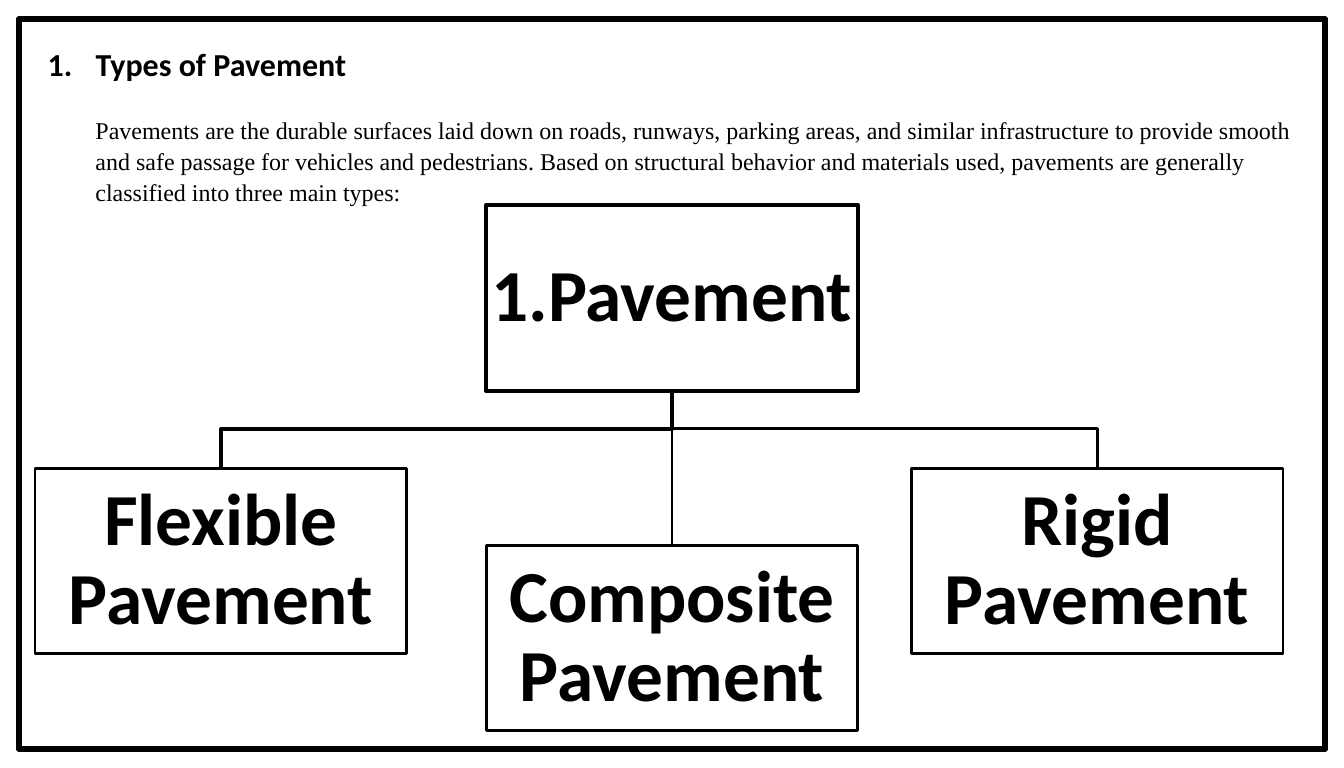
from dataclasses import dataclass

from lxml.etree import SubElement
from pptx import Presentation
from pptx.dml.color import RGBColor
from pptx.enum.shapes import MSO_CONNECTOR as CONNECTOR, MSO_SHAPE as SHAPE
from pptx.enum.text import MSO_ANCHOR as ANCHOR, MSO_AUTO_SIZE as AUTO_SIZE, PP_ALIGN as ALIGN
from pptx.oxml.ns import qn
from pptx.util import Emu, Pt

PX = 9525


@dataclass(frozen=True)
class Theme:
    ink: RGBColor = RGBColor(0, 0, 0)
    paper: RGBColor = RGBColor(255, 255, 255)
    heading_font: str = "Calibri"
    body_font: str = "Times New Roman"
    heading_size: int = 24
    body_size: int = 18
    box_size: int = 55
    frame_line: float = 4.5
    strong_line: float = 3
    thin_line: float = 2.25


THEME = Theme()
BOX_WIDTH, BOX_HEIGHT = 372, 186
ROOT = ("Pavement", 486, 205)
BRANCHES = [
    ("Rigid Pavement", 911, 468, THEME.thin_line),
    ("Composite Pavement", 486, 545, THEME.thin_line),
    ("Flexible Pavement", 35, 468, THEME.strong_line),
]
INTRO = (
    "Pavements are the durable surfaces laid down on roads, runways, parking areas, "
    "and similar infrastructure to provide smooth and safe passage for vehicles and "
    "pedestrians. Based on structural behavior and materials used, pavements are "
    "generally classified into three main types:"
)


def px(*lengths):
    return [Emu(length * PX) for length in lengths]


def set_values(target, values):
    for name, value in values.items():
        setattr(target, name, value)


def number_paragraph(para, hang=0):
    """Number a paragraph automatically, with a hanging indent in px."""
    properties = para._p.get_or_add_pPr()
    properties.set("marL", str(hang * PX))
    properties.set("indent", str(-hang * PX))
    SubElement(properties, qn("a:buFont"), typeface="+mj-lt")
    SubElement(properties, qn("a:buAutoNum"), type="arabicPeriod")


def write_text(frame, text, font, size, bold=True, **layout):
    set_values(frame, {"word_wrap": True, "auto_size": AUTO_SIZE.NONE,
                       "vertical_anchor": ANCHOR.TOP})
    para = frame.paragraphs[0]
    set_values(para, layout)
    span = para.add_run()
    span.text = text
    set_values(span.font, {"name": font, "size": Pt(size), "bold": bold})
    span.font.color.rgb = THEME.ink
    return para


def style_line(shape, weight):
    shape.line.color.rgb = THEME.ink
    shape.line.width = Pt(weight)


def add_rectangle(page, area, weight):
    box = page.shapes.add_shape(SHAPE.RECTANGLE, *px(*area))
    box.shadow.inherit = False
    box.fill.solid()
    box.fill.fore_color.rgb = THEME.paper
    style_line(box, weight)
    return box


def add_title(page, text):
    title = page.shapes.title
    set_values(title, dict(zip(("left", "top", "width", "height"), px(38, 40, 1267, 50))))
    para = write_text(title.text_frame, text, THEME.heading_font, THEME.heading_size,
                      alignment=ALIGN.LEFT)
    number_paragraph(para, hang=48)
    return title


def add_intro(page, text):
    box = page.shapes.add_textbox(*px(86, 109, 1219, 100))
    write_text(box.text_frame, text, THEME.body_font, THEME.body_size, bold=False,
               line_spacing=1.07)


def add_node(page, text, left, top, weight, numbered=False):
    box = add_rectangle(page, (left, top, BOX_WIDTH, BOX_HEIGHT), weight)
    frame = box.text_frame
    sides = ("margin_left", "margin_top", "margin_right", "margin_bottom")
    set_values(frame, dict.fromkeys(sides, Emu(4 * PX)))
    para = write_text(frame, text, THEME.heading_font, THEME.box_size,
                      alignment=ALIGN.CENTER, line_spacing=0.9)
    frame.vertical_anchor = ANCHOR.MIDDLE
    if numbered:
        number_paragraph(para)


def add_branch_line(page, end_x, end_y, weight):
    """Join the root box to the top of a branch, turning halfway if it lies aside."""
    start_x = ROOT[1] + BOX_WIDTH // 2
    start_y = ROOT[2] + BOX_HEIGHT
    if end_x == start_x:
        line = page.shapes.add_connector(CONNECTOR.STRAIGHT,
                                         *px(start_x, start_y, end_x, end_y))
        SubElement(line._element.spPr, qn("a:effectLst"))
    else:
        turn_y = (start_y + end_y) // 2
        outline = page.shapes.build_freeform(start_x, start_y, scale=PX)
        outline.add_line_segments([(start_x, turn_y), (end_x, turn_y), (end_x, end_y)],
                                  close=False)
        line = outline.convert_to_shape()
        line.fill.background()
        line.shadow.inherit = False
    style_line(line, weight)


def main():
    deck = Presentation()
    deck.slide_width, deck.slide_height = px(1344, 768)
    page = deck.slides.add_slide(deck.slide_layouts[5])

    title = add_title(page, "Types of Pavement")
    border = add_rectangle(page, (19, 19, 1306, 730), THEME.frame_line)
    title.element.addprevious(border.element)
    add_intro(page, INTRO)

    for _, left, top, weight in BRANCHES:
        add_branch_line(page, left + BOX_WIDTH // 2, top, weight)
    add_node(page, *ROOT, THEME.strong_line, numbered=True)
    for text, left, top, _ in reversed(BRANCHES):
        add_node(page, text, left, top, THEME.thin_line)

    deck.save("out.pptx")


if __name__ == "__main__":
    main()
